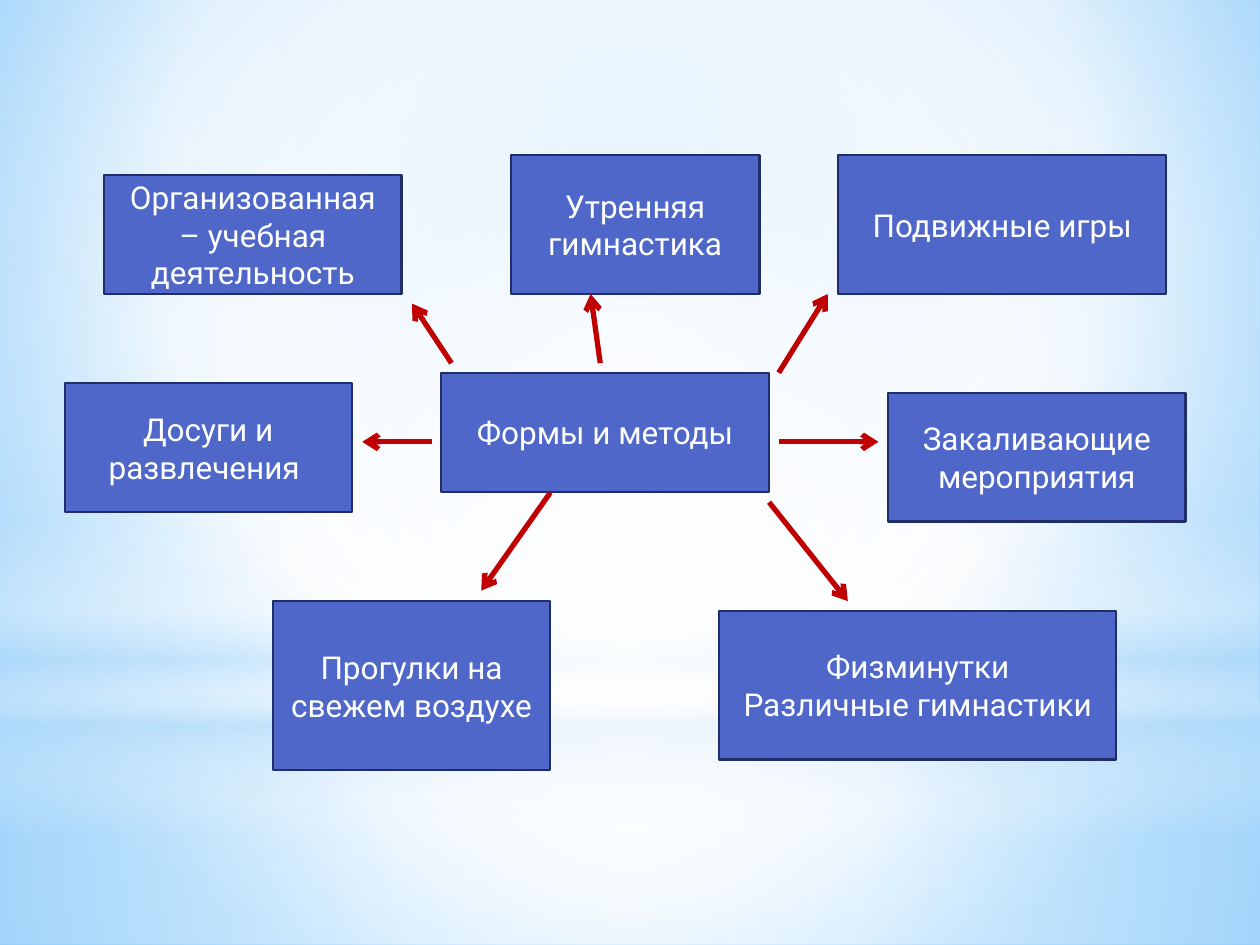
from dataclasses import dataclass

from lxml import etree
from pptx import Presentation
from pptx.dml.color import RGBColor
from pptx.enum import shapes, text
from pptx.oxml import ns, parse_xml
from pptx.util import Pt


@dataclass(frozen=True)
class Theme:
    font: str = "Roboto"
    size: float = 18
    ink: str = "FFFFFF"
    box: str = "4E67C8"
    edge: str = "1F2E69"
    edge_width: float = 1.25
    arrow: str = "C00000"
    arrow_width: float = 3
    white: str = "FFFFFF"
    mist: str = "B4DCFA"
    sky: str = "9ED5FF"
    deep_sky: str = "5BB9FF"


THEME = Theme()
RECT = shapes.MSO_SHAPE.RECTANGLE
OVAL = shapes.MSO_SHAPE.OVAL
WIDTH, HEIGHT = 720, 540
CENTER = (50, 50, 50, 50)

# Gradient stops: position %, colour, opacity %
SKY_STOPS = [(0, THEME.sky, 100), (60, THEME.white, 100), (100, THEME.deep_sky, 100)]

# Preset, (left, top, width, height), stops, focus (None means top to bottom)
GLOWS = [
    (RECT, (0, 401.8, WIDTH, 138.2),
     [(0, THEME.white, 91), (37, THEME.white, 76), (100, THEME.mist, 79)], CENTER),
    (RECT, (0, 0, WIDTH, 401.8),
     [(0, THEME.white, 89), (48, THEME.white, 62), (100, THEME.mist, 79)], CENTER),
    (RECT, (0, 296.6, WIDTH, 180),
     [(0, THEME.white, 0), (29, THEME.white, 30), (45, THEME.mist, 40),
      (55, THEME.white, 26), (65, THEME.mist, 60), (100, THEME.white, 0)], None),
    (OVAL, (0, 126, WIDTH, 401.8),
     [(0, THEME.white, 100), (56, THEME.white, 0)], CENTER),
]

BOXES = [
    ("Формы и методы", (252, 213, 187.5, 68)),
    ("Организованная – учебная деятельность", (59.5, 100, 170, 68)),
    ("Утренняя гимнастика", (292, 88.5, 142, 79.5)),
    ("Подвижные игры", (479, 88.5, 187.5, 79.5)),
    ("Закаливающие мероприятия", (507.5, 224.5, 170, 73.5)),
    ("Физминутки\nРазличные гимнастики", (411, 349, 227, 85)),
    ("Прогулки на свежем воздухе", (156, 343.5, 158.5, 96.5)),
    ("Досуги и развлечения ", (37, 219, 164, 73.5)),
]

# Start x, start y, end x, end y
ARROWS = [
    (258, 207.5, 235.5, 173.5),
    (343, 207.5, 337.5, 168),
    (445, 213, 473, 168),
    (445, 252.5, 502, 252.5),
    (439.5, 287, 484.5, 343.5),
    (247, 252.5, 207, 252.5),
    (314.5, 281.5, 275, 337.5),
]


def set_gradient(fill, holder, stops, focus):
    """Fill the holder element; focus gives the left, top, right, bottom insets in %."""
    fill.background()
    stop_xml = "".join(
        f'<a:gs pos="{pos * 1000}"><a:srgbClr val="{color}">'
        f'<a:alpha val="{opacity * 1000}"/></a:srgbClr></a:gs>'
        for pos, color, opacity in stops)
    if focus:
        insets = " ".join(f'{side}="{inset * 1000}"' for side, inset in zip("ltrb", focus))
        direction = f'<a:path path="circle"><a:fillToRect {insets}/></a:path>'
    else:
        direction = '<a:lin ang="5400000" scaled="0"/>'
    gradient = parse_xml(f'<a:gradFill {ns.nsdecls("a")} rotWithShape="1">'
                         f'<a:gsLst>{stop_xml}</a:gsLst>{direction}</a:gradFill>')
    holder.replace(holder.find(ns.qn("a:noFill")), gradient)


def paint_background(page):
    fill = page.background.fill
    fill.background()
    holder = page.element.find(".//" + ns.qn("p:bgPr"))
    set_gradient(fill, holder, SKY_STOPS, (20, 10, 20, 60))


def add_plain_shape(page, preset, frame):
    shape = page.shapes.add_shape(preset, *map(Pt, frame))
    shape.shadow.inherit = False
    return shape


def add_glow(page, preset, frame, stops, focus):
    glow = add_plain_shape(page, preset, frame)
    glow.line.fill.background()
    set_gradient(glow.fill, glow.element.spPr, stops, focus)


def add_box(page, label, frame):
    box = add_plain_shape(page, RECT, frame)
    box.fill.solid()
    box.fill.fore_color.rgb = RGBColor.from_string(THEME.box)
    box.line.color.rgb = RGBColor.from_string(THEME.edge)
    box.line.width = Pt(THEME.edge_width)
    box.text_frame.text = label
    box.text_frame.word_wrap = True
    box.text_frame.vertical_anchor = text.MSO_ANCHOR.MIDDLE
    for para in box.text_frame.paragraphs:
        para.alignment = text.PP_ALIGN.CENTER
        para.font.name = THEME.font
        para.font.size = Pt(THEME.size)
        para.font.color.rgb = RGBColor.from_string(THEME.ink)


def add_arrow(page, ends):
    arrow = page.shapes.add_connector(shapes.MSO_CONNECTOR.STRAIGHT, *map(Pt, ends))
    arrow.line.color.rgb = RGBColor.from_string(THEME.arrow)
    arrow.line.width = Pt(THEME.arrow_width)
    etree.SubElement(arrow.line._get_or_add_ln(), ns.qn("a:tailEnd"), type="arrow")
    etree.SubElement(arrow.element.spPr, ns.qn("a:effectLst"))


def main():
    deck = Presentation()
    deck.slide_width, deck.slide_height = Pt(WIDTH), Pt(HEIGHT)
    page = deck.slides.add_slide(deck.slide_layouts[6])
    paint_background(page)
    for glow in GLOWS:
        add_glow(page, *glow)
    for label, frame in BOXES:
        add_box(page, label, frame)
    for ends in ARROWS:
        add_arrow(page, ends)
    deck.save("out.pptx")


if __name__ == "__main__":
    main()
